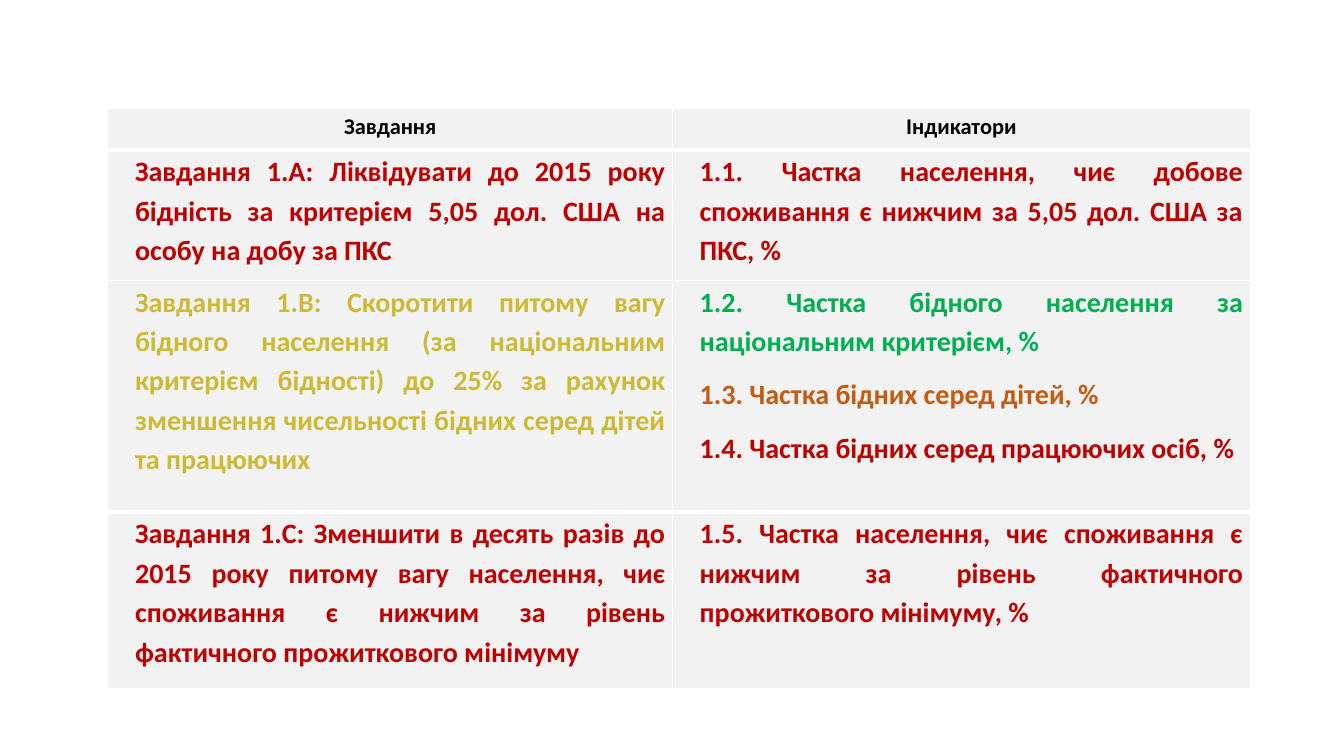
import dataclasses

import lxml.etree
import pptx
import pptx.dml.color
import pptx.enum.text
import pptx.oxml.ns
import pptx.util

Inches = pptx.util.Inches
Align = pptx.enum.text.PP_ALIGN

COLORS = {
    "black": "000000",
    "white": "FFFFFF",
    "cell": "F2F2F2",
    "red": "C00000",
    "yellow": "CCBA34",
    "green": "00B050",
    "orange": "C55A11",
}
COLUMN_WIDTHS = (5.6, 5.73)


@dataclasses.dataclass(frozen=True)
class Entry:
    text: str
    color: str = "red"


@dataclasses.dataclass(frozen=True)
class GoalRow:
    height: float
    task: Entry
    indicators: tuple[Entry, ...]
    top_border: float = 1
    bottom_border: float = 1
    space_after: float = 10
    is_header: bool = False


ROWS = (
    GoalRow(
        0.41,
        Entry("Завдання", "black"),
        (Entry("Індикатори", "black"),),
        bottom_border=3,
        is_header=True,
    ),
    GoalRow(
        1.29,
        Entry("Завдання 1.А: Ліквідувати до 2015 року бідність за критерієм "
              "5,05 дол. США на особу на добу за ПКС"),
        (Entry("1.1. Частка населення, чиє добове споживання є нижчим за "
               "5,05 дол. США за ПКС, %"),),
        top_border=3,
    ),
    GoalRow(
        2.3,
        Entry("Завдання 1.B: Скоротити питому вагу бідного населення "
              "(за національним критерієм бідності) до 25% за рахунок "
              "зменшення чисельності бідних серед дітей та працюючих", "yellow"),
        (
            Entry("1.2. Частка бідного населення за національним критерієм, %", "green"),
            Entry("1.3. Частка бідних серед дітей, %", "orange"),
            Entry("1.4. Частка бідних серед працюючих осіб, %"),
        ),
        bottom_border=3,
    ),
    GoalRow(
        1.75,
        Entry("Завдання 1.C: Зменшити в десять разів до 2015 року питому вагу "
              "населення, чиє споживання є нижчим за рівень фактичного "
              "прожиткового мінімуму"),
        (Entry("1.5. Частка населення, чиє споживання є нижчим за рівень "
               "фактичного прожиткового мінімуму, %"),),
        top_border=3,
        space_after=0,
    ),
)


def rgb(name: str) -> pptx.dml.color.RGBColor:
    return pptx.dml.color.RGBColor.from_string(COLORS[name])


def write_text(paragraph, text: str, *, color: str, size: float,
               alignment, indent: float, space_after: float) -> None:
    paragraph.alignment = alignment
    paragraph.line_spacing = 1.15
    paragraph.space_before = pptx.util.Pt(0)
    paragraph.space_after = pptx.util.Pt(space_after)
    properties = paragraph._p.get_or_add_pPr()
    properties.set("marL", str(Inches(indent)))
    properties.set("indent", "0")
    run = paragraph.add_run()
    run.text = text
    run.font.name = "Calibri"
    run.font.size = pptx.util.Pt(size)
    run.font.bold = True
    run.font.color.rgb = rgb(color)


def add_border(cell, side: str, width: float) -> None:
    qualified = pptx.oxml.ns.qn
    properties = cell._tc.get_or_add_tcPr()
    line = lxml.etree.SubElement(properties, qualified(f"a:ln{side}"),
                                 w=str(pptx.util.Pt(width)))
    fill = lxml.etree.SubElement(line, qualified("a:solidFill"))
    lxml.etree.SubElement(fill, qualified("a:srgbClr"), val=COLORS["white"])


def fill_cell(cell, entries: tuple[Entry, ...], row: GoalRow) -> None:
    cell.margin_left = cell.margin_right = Inches(0.07)
    cell.margin_top = cell.margin_bottom = Inches(0)
    borders = {"L": 1, "R": 1, "T": row.top_border, "B": row.bottom_border}
    for side, width in borders.items():
        add_border(cell, side, width)
    cell.fill.solid()
    cell.fill.fore_color.rgb = rgb("cell")
    frame = cell.text_frame
    for index, entry in enumerate(entries):
        paragraph = frame.add_paragraph() if index else frame.paragraphs[0]
        write_text(
            paragraph,
            entry.text,
            color=entry.color,
            size=16 if row.is_header else 20,
            alignment=Align.CENTER if row.is_header else Align.JUSTIFY,
            indent=0 if row.is_header else 0.2,
            space_after=row.space_after,
        )


def add_goal_table(slide) -> None:
    table = slide.shapes.add_table(
        len(ROWS), len(COLUMN_WIDTHS), Inches(1.07), Inches(1.08),
        Inches(sum(COLUMN_WIDTHS)), Inches(sum(row.height for row in ROWS)),
    ).table
    table.first_row = False
    table.horz_banding = False
    for column, width in zip(table.columns, COLUMN_WIDTHS):
        column.width = Inches(width)
    for index, row in enumerate(ROWS):
        table.rows[index].height = Inches(row.height)
        fill_cell(table.cell(index, 0), (row.task,), row)
        fill_cell(table.cell(index, 1), row.indicators, row)


def main() -> None:
    presentation = pptx.Presentation()
    presentation.slide_width = Inches(13.33)
    presentation.slide_height = Inches(7.5)
    slide = presentation.slides.add_slide(presentation.slide_layouts[6])
    add_goal_table(slide)
    presentation.save("out.pptx")


if __name__ == "__main__":
    main()
